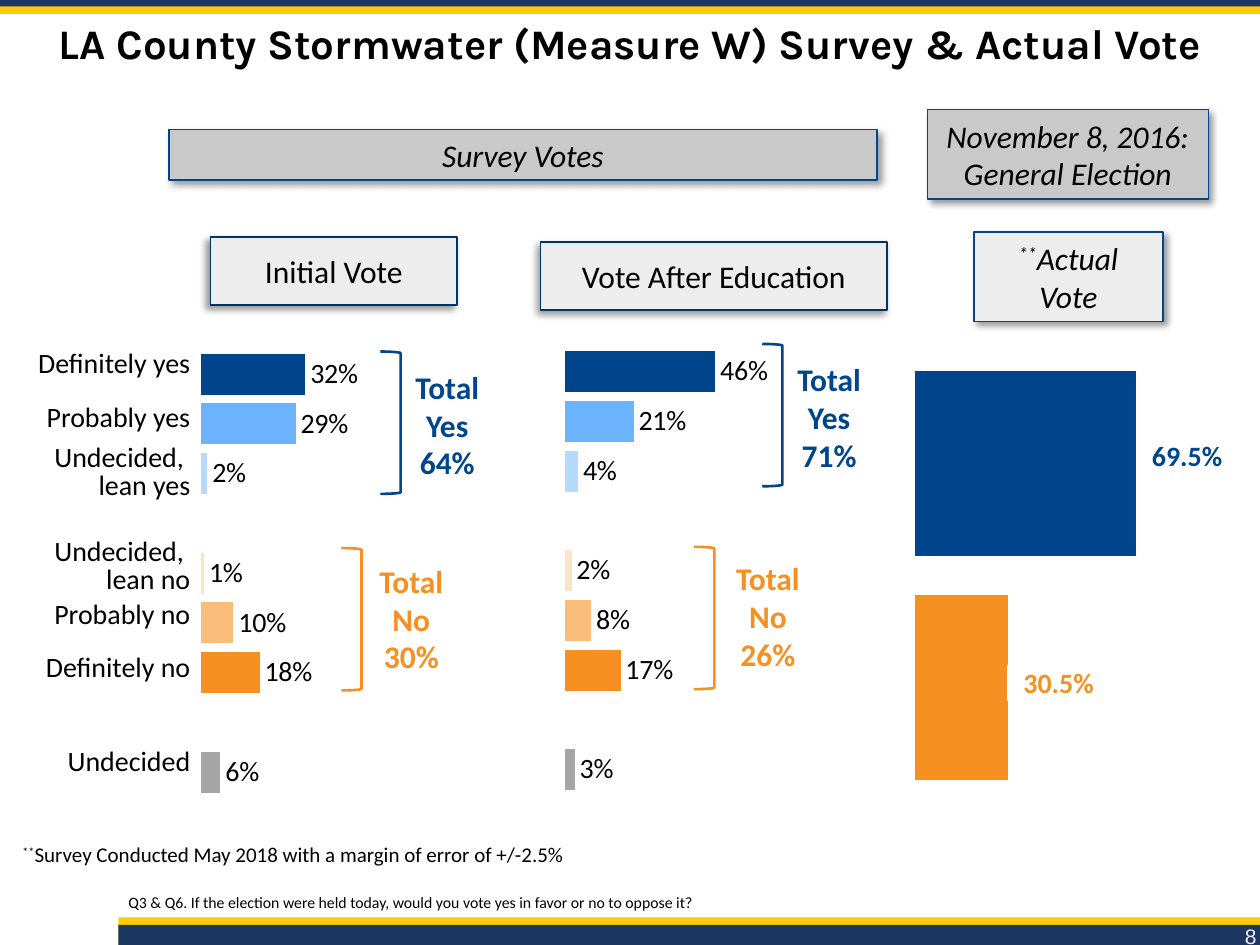
from lxml import etree
from pptx import Presentation
from pptx import util as u
from pptx.chart.data import CategoryChartData
from pptx.dml.color import RGBColor
from pptx.enum import chart as ch, shapes, text
from pptx.oxml import parse_xml
from pptx.oxml.ns import nsdecls, qn

BLACK = RGBColor(0x00, 0x00, 0x00)
NAVY = RGBColor(0x1B, 0x36, 0x61)
GOLD = RGBColor(0xFC, 0xCA, 0x09)
PALE = RGBColor(0xED, 0xED, 0xED)
SILVER = RGBColor(0xC9, 0xC9, 0xC9)
PAGE = RGBColor(0xEF, 0xEF, 0xEF)
EDGE = RGBColor(0x01, 0x33, 0x68)
YES = RGBColor(0x01, 0x45, 0x8C)
PROBABLY_YES = RGBColor(0x6C, 0xB3, 0xFD)
LEAN_YES = RGBColor(0xB6, 0xD9, 0xFE)
LEAN_NO = RGBColor(0xFD, 0xE4, 0xC9)
PROBABLY_NO = RGBColor(0xF9, 0xBC, 0x79)
NO = RGBColor(0xF6, 0x90, 0x21)
UNDECIDED = RGBColor(0xA5, 0xA5, 0xA5)

COLS, ROWS = 100, 75
LEFT, CENTER, RIGHT = text.PP_ALIGN.LEFT, text.PP_ALIGN.CENTER, text.PP_ALIGN.RIGHT
TOP, MIDDLE, BOTTOM = (text.MSO_ANCHOR.TOP, text.MSO_ANCHOR.MIDDLE,
                       text.MSO_ANCHOR.BOTTOM)
RECT, BRACKET = shapes.MSO_SHAPE.RECTANGLE, shapes.MSO_SHAPE.RIGHT_BRACKET


class Deck:
    """Places elements on a grid of 100 columns by 75 rows."""

    def __init__(self, font="Calibri"):
        self.font = font
        self.prs = Presentation()
        self.prs.slide_width, self.prs.slide_height = u.Inches(10), u.Inches(7.5)
        self.s = self.prs.slides.add_slide(self.prs.slide_layouts[6])

    def place(self, x, y, w, h):
        col, row = self.prs.slide_width / COLS, self.prs.slide_height / ROWS
        return [u.Emu(round(v)) for v in (x * col, y * row, w * col, h * row)]

    def style(self, font, size, color=BLACK, bold=False, italic=False, name=None):
        font.name, font.size = name or self.font, u.Pt(size)
        font.bold, font.italic = bold, italic
        font.color.rgb = color

    def set_text(self, tf, words, size, align=CENTER, anchor=TOP, **look):
        """Fill a text frame; leading asterisks become superscript."""
        tf.word_wrap, tf.vertical_anchor = True, anchor
        p = tf.paragraphs[0]
        p.alignment = align
        body = words.lstrip("*")
        if body != words:
            r = p.add_run()
            r.text = words[:len(words) - len(body)]
            r._r.get_or_add_rPr().set("baseline", "30000")
            first, *others = body.split("\n")
            p.add_run().text = first
            for line in others:
                p.add_line_break()
                p.add_run().text = line
        else:
            p.text = words
        self.style(p.font, size, **look)
        return p

    def label(self, at, words, size, **look):
        sp = self.s.shapes.add_textbox(*self.place(*at))
        return self.set_text(sp.text_frame, words, size, **look)

    def shape(self, at, kind=RECT, fill=None, line=None, width=1):
        sp = self.s.shapes.add_shape(kind, *self.place(*at))
        sp.shadow.inherit = False
        if fill is None:
            sp.fill.background()
        else:
            sp.fill.solid()
            sp.fill.fore_color.rgb = fill
        if line is None:
            sp.line.fill.background()
        else:
            sp.line.color.rgb, sp.line.width = line, u.Pt(width)
        return sp

    def header(self, at, words, fill, line=YES, width=0.75, angle=45, italic=True):
        sp = self.shape(at, fill=fill, line=line, width=width)
        effects = sp._element.spPr.find(qn("a:effectLst"))
        effects.append(parse_xml(
            f'<a:outerShdw {nsdecls("a")} blurRad="{u.Pt(4)}" dist="{u.Pt(3)}" '
            f'dir="{angle * 60000}" algn="ctr" rotWithShape="0">'
            '<a:srgbClr val="000000"><a:alpha val="40000"/></a:srgbClr></a:outerShdw>'))
        self.set_text(sp.text_frame, words, 18, anchor=MIDDLE, italic=italic)

    def table(self, at, heights, words, anchor, spacing=None, **look):
        """One column of right-aligned cells without fill or borders."""
        frame = self.s.shapes.add_table(len(heights), 1, *self.place(*at))
        tbl = frame.table
        tbl.first_row = tbl.horz_banding = False
        for row, height, entry in zip(tbl.rows, heights, words):
            row.height = self.place(0, 0, 0, height)[3]
            cell = row.cells[0]
            cell.fill.background()
            cell.margin_left = cell.margin_right = cell.margin_top = u.Inches(0.01)
            cell.margin_bottom = 0
            p = self.set_text(cell.text_frame, entry, 16, align=RIGHT, **look)
            cell.vertical_anchor = anchor
            if spacing:
                p.line_spacing = u.Pt(spacing)

    def bars(self, at, values, colors, plot, top, labels=True):
        """Horizontal bars; plot is the inner area as shares of the chart."""
        data = CategoryChartData()
        data.categories = [str(i + 1) for i in range(len(values))]
        data.add_series("Series 1", values)
        chart = self.s.shapes.add_chart(
            ch.XL_CHART_TYPE.BAR_CLUSTERED, *self.place(*at), data).chart
        chart.has_legend = chart.has_title = False
        self.style(chart.font, 10)
        cat, val = chart.category_axis, chart.value_axis
        cat.reverse_order = True
        cat.tick_label_position = ch.XL_TICK_LABEL_POSITION.NONE
        cat.major_tick_mark = cat.minor_tick_mark = ch.XL_TICK_MARK.NONE
        cat.format.line.fill.background()
        val.minimum_scale, val.maximum_scale = 0, top
        val.has_major_gridlines = val.visible = False
        bar = chart.plots[0]
        bar.gap_width, bar.vary_by_categories = 21, False
        for i, color in enumerate(colors):
            if color is not None:
                fill = bar.series[0].points[i].format.fill
                fill.solid()
                fill.fore_color.rgb = color
        if labels:
            bar.has_data_labels = True
            dl = bar.data_labels
            dl.show_value = True
            dl.number_format, dl.number_format_is_linked = "0%", False
            dl.position = ch.XL_LABEL_POSITION.OUTSIDE_END
            self.style(dl.font, 16)
        area = chart._chartSpace.find(".//" + qn("c:plotArea"))
        for old in area.findall(qn("c:layout")):
            area.remove(old)
        layout = etree.Element(qn("c:layout"))
        manual = etree.SubElement(layout, qn("c:manualLayout"))
        settings = [("layoutTarget", "inner"), ("xMode", "edge"), ("yMode", "edge")]
        for tag, value in settings + list(zip("xywh", plot)):
            etree.SubElement(manual, qn("c:" + tag)).set("val", str(value))
        area.insert(0, layout)


def main():
    d = Deck()
    for at, color in [((9.4, 72.8, 90.6, 2.2), GOLD), ((9.4, 73.4, 90.6, 1.6), NAVY),
                      ((0, 0, 100, 1.1), GOLD), ((0, 0, 100, 0.5), NAVY)]:
        d.shape(at, fill=color)
    d.label((90.8, 71.5, 9.9, 4.3), "8", 12, align=RIGHT, anchor=BOTTOM,
            color=PAGE, name="Arial")
    d.label((9.2, 68.9, 90.8, 4), "Q3 & Q6. If the election were held today, would "
            "you vote yes in favor or no to oppose it?", 9, align=LEFT,
            anchor=BOTTOM).line_spacing = 0.9
    d.label((0, 0.9, 100, 14.5), "LA County Stormwater (Measure W) Survey & Actual Vote",
            24, bold=True, name="Karla")

    for at, words in [((16.7, 18.8, 19.6, 5.4), "Initial Vote"),
                      ((42.9, 19.2, 27.5, 5.4), "Vote After Education")]:
        d.header(at, words, PALE, line=EDGE, width=1, angle=135, italic=False)
    d.header((13.4, 10.3, 56.2, 4), "Survey Votes", SILVER)
    d.header((73.6, 8.7, 22.3, 7.1), "November 8, 2016: General Election", SILVER)
    d.header((77.3, 18.4, 15, 7.1), "**Actual\nVote", PALE)

    d.table((0, 27.9, 15.2, 33.9), [2.3, 4.3, 5.4, 2.9, 4.5, 2.8, 4.2, 2.9, 4.6],
            ["Definitely yes", "Probably yes", "Undecided, \nlean yes", "",
             "Undecided, \nlean no", "Probably no", "Definitely no", "", "Undecided"],
            BOTTOM, spacing=16)

    answers = [YES, PROBABLY_YES, LEAN_YES, None, LEAN_NO, PROBABLY_NO, NO, None,
               UNDECIDED]
    surveys = [
        ((14.5, 25.7), [0.32, 0.29, 0.02, None, 0.01, 0.1, 0.18, None, 0.06],
         [("Yes\n64%", YES, (30.1, 28.7, 10.8), (30.2, 27.9)),
          ("No\n30%", NO, (27.8, 44.1, 9.7), (27.1, 43.5))]),
        ((43.4, 25.5), [0.46, 0.21, 0.04, None, 0.02, 0.08, 0.17, None, 0.03],
         [("Yes\n71%", YES, (60.4, 28.1, 10.8), (60.5, 27.3)),
          ("No\n26%", NO, (56.1, 43.9, 9.7), (55.1, 43.4))]),
    ]
    for corner, values, totals in surveys:
        d.bars((*corner, 28.8, 40.4), values, answers, (0.05, 0.05, 0.9, 0.88), 1)
        for words, color, spot, bracket in totals:
            d.label((*spot, 10.1), "Total " + words, 18, color=color, bold=True)
            d.shape((*bracket, 1.6, 11.3), BRACKET, line=color, width=1.5)

    d.bars((69.6, 25.9, 30.4, 40.4), [100, 42], [YES, NO],
           (0.1, 0.05, 0.82, 0.88), 142, labels=False)
    for x, y, words, color in [(90.2, 34.8, "69.5%", YES), (80, 52.8, "30.5%", NO)]:
        d.table((x, y, 6.9, 2.8), [2.8], [words], MIDDLE, color=color, bold=True)

    d.label((0.8, 66.3, 98.3, 3),
            "**Survey Conducted May 2018 with a margin of error of +/-2.5%", 12,
            align=LEFT)
    d.prs.save("out.pptx")


if __name__ == "__main__":
    main()
